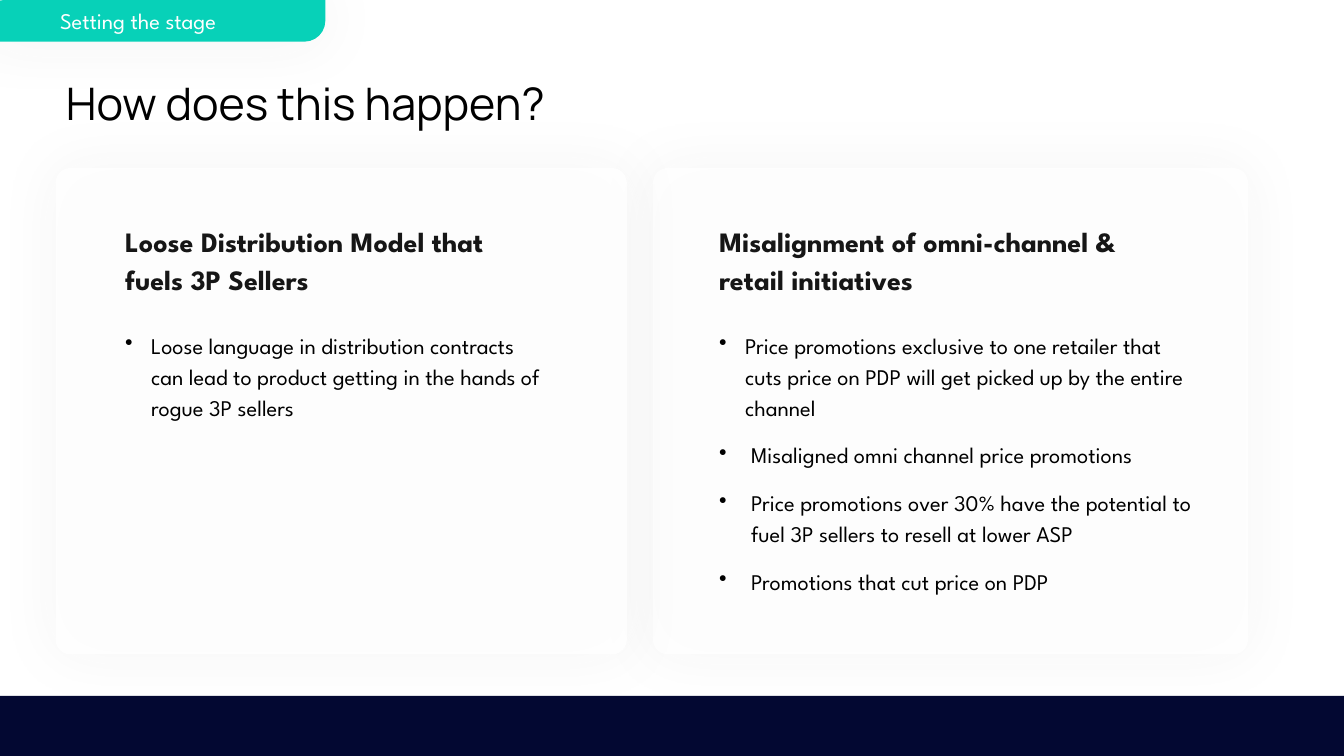
from lxml import etree
from pptx import Presentation
from pptx import util as u
from pptx.dml.color import RGBColor
from pptx.enum import shapes, text
from pptx.oxml import ns

Pt = u.Pt
COLOURS = {
    "page": "FFFFFF", "footer": "030832", "tab": "07D1B8", "card": "FFFFFF",
    "shadow": "3F3F3F", "heading": "161616", "body": "000000", "tab_text": "FFFFFF",
}
BODY_FONT = "League Spartan"
TITLE_FONT = "Manrope"


def colour(name):
    return RGBColor.from_string(COLOURS[name])


def add_child(parent, tag, **attributes):
    child = etree.SubElement(parent, ns.qn(tag))
    for key, value in attributes.items():
        child.set(key, str(value))
    return child


def add_panel(slide, kind, box, fill, adjustments=(), opacity=None, soft_shadow=False):
    """A filled shape without outline, with an optional soft shadow."""
    shape = slide.shapes.add_shape(kind, *map(Pt, box))
    for index, value in enumerate(adjustments):
        shape.adjustments[index] = value
    shape.fill.solid()
    shape.fill.fore_color.rgb = colour(fill)
    shape.line.fill.background()
    shape.shadow.inherit = False
    properties = shape._element.spPr
    if opacity is not None:
        fill_colour = properties.find(".//" + ns.qn("a:srgbClr"))
        add_child(fill_colour, "a:alpha", val=opacity * 1000)
    if soft_shadow:
        effects = properties.find(ns.qn("a:effectLst"))
        shadow = add_child(effects, "a:outerShdw", blurRad=Pt(34), dist=0, dir=0,
                           algn="ctr", rotWithShape=0)
        shadow_colour = add_child(shadow, "a:srgbClr", val=COLOURS["shadow"])
        add_child(shadow_colour, "a:alpha", val=6000)
    return shape


def set_frame(shape, insets, anchor=text.MSO_ANCHOR.TOP):
    frame = shape.text_frame
    frame.word_wrap = True
    frame.vertical_anchor = anchor
    (frame.margin_left, frame.margin_top,
     frame.margin_right, frame.margin_bottom) = map(Pt, insets)
    return frame


def add_text_box(slide, box, insets=(4.5, 0, 4.5, 0)):
    return set_frame(slide.shapes.add_textbox(*map(Pt, box)), insets)


def write(paragraph, words, size, ink, font=BODY_FONT, bold=False, spacing=1.15):
    paragraph.alignment = text.PP_ALIGN.LEFT
    paragraph.line_spacing = spacing
    run = paragraph.add_run()
    run.text = words
    run.font.size = Pt(size)
    run.font.name = font
    run.font.bold = bold
    run.font.color.rgb = colour(ink)


def add_bullet(paragraph, indent):
    properties = paragraph._p.get_or_add_pPr()
    properties.set("marL", str(Pt(indent)))
    properties.set("indent", str(-Pt(indent)))
    bullet_colour = add_child(properties, "a:buClr")
    add_child(bullet_colour, "a:srgbClr", val=COLOURS["body"])
    add_child(properties, "a:buChar", char="•")


def draw_footer(slide, box):
    add_panel(slide, shapes.MSO_SHAPE.RECTANGLE, box, "footer")


def draw_tab(slide, box, words):
    tab = add_panel(slide, shapes.MSO_SHAPE.ROUND_2_DIAG_RECTANGLE, box, "tab",
                    adjustments=(0.5, 0), soft_shadow=True)
    frame = set_frame(tab, (37.5, 3, 32.5, 3), text.MSO_ANCHOR.MIDDLE)
    write(frame.paragraphs[0], words, 12, "tab_text", spacing=1.0)


def draw_title(slide, box, words):
    frame = add_text_box(slide, box, insets=(7.2,) * 4)
    write(frame.paragraphs[0], words, 24, "body", font=TITLE_FONT)


def draw_card(slide, box, text_left, heading, heading_width, bullets, bullets_width):
    left, top, width, height = box
    add_panel(slide, shapes.MSO_SHAPE.ROUNDED_RECTANGLE, box, "card",
              adjustments=(0.03,), opacity=82, soft_shadow=True)
    # Heading
    frame = add_text_box(slide, (left + text_left, top + 27.4, heading_width, 38))
    write(frame.paragraphs[0], heading, 15, "heading", bold=True)
    # Bullets: the first sits slightly closer to its mark
    frame = add_text_box(slide, (left + text_left, top + 85.7, bullets_width, height - 91))
    for index, words in enumerate(bullets):
        paragraph = frame.add_paragraph() if index else frame.paragraphs[0]
        add_bullet(paragraph, 17.1 if index else 13.9)
        if index:
            paragraph.space_before = Pt(9)
        write(paragraph, words, 12, "body")


def main():
    presentation = Presentation()
    presentation.slide_width, presentation.slide_height = Pt(720), Pt(405)
    slide = presentation.slides.add_slide(presentation.slide_layouts[6])
    slide.background.fill.solid()
    slide.background.fill.fore_color.rgb = colour("page")

    draw_footer(slide, (0, 372.8, 720, 32.2))
    draw_card(slide, (349.8, 90, 318.8, 260.6), 31,
              "Misalignment of omni-channel & retail initiatives", 245,
              ["Price promotions exclusive to one retailer that cuts price on PDP "
               "will get picked up by the entire channel",
               "Misaligned omni channel price promotions",
               "Price promotions over 30% have the potential to fuel 3P sellers "
               "to resell at lower ASP",
               "Promotions that cut price on PDP"], 268.6)
    draw_title(slide, (28.3, 28.8, 493, 34), "How does this happen?")
    draw_card(slide, (29.8, 90, 306, 260.6), 32.8,
              "Loose Distribution Model that fuels 3P Sellers", 210,
              ["Loose language in distribution contracts can lead to product "
               "getting in the hands of rogue 3P sellers"], 235.4)
    draw_tab(slide, (-8.6, 0, 182.9, 22.3), "Setting the stage")

    presentation.save("out.pptx")


if __name__ == "__main__":
    main()
